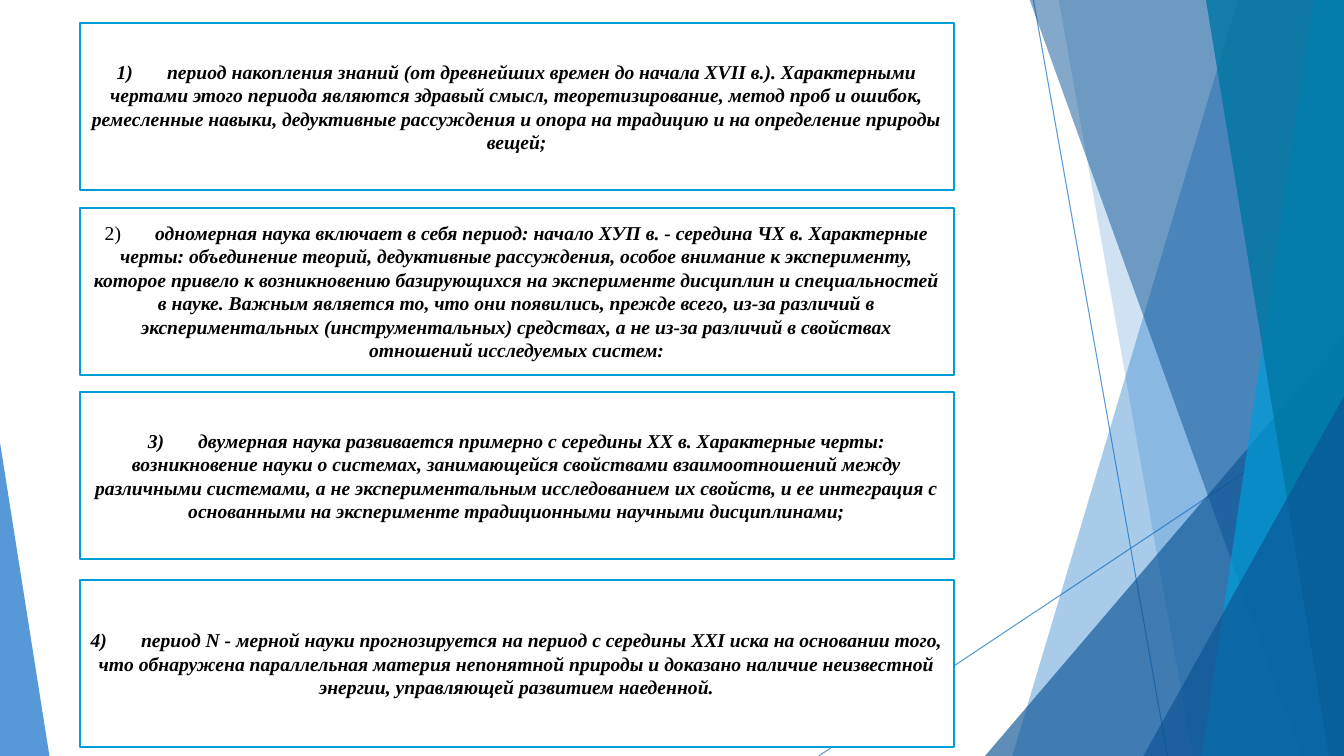
from collections import namedtuple

from lxml.etree import SubElement
from pptx import Presentation
from pptx.dml.color import RGBColor
from pptx.enum.shapes import MSO_CONNECTOR, MSO_SHAPE
from pptx.enum.text import MSO_ANCHOR, PP_ALIGN
from pptx.oxml.ns import qn
from pptx.util import Pt

PX = 9144
Box = namedtuple("Box", "left top width height")

WHITE = RGBColor(0xFF, 0xFF, 0xFF)
BLACK = RGBColor(0x00, 0x00, 0x00)
BLUE = RGBColor(0x0F, 0x6F, 0xC6)
NAVY = RGBColor(0x0B, 0x53, 0x94)
CYAN = RGBColor(0x00, 0x9D, 0xD9)
TEAL = RGBColor(0x00, 0x76, 0xA3)

PLAIN = {"size": Pt(14), "name": "Times New Roman"}
STRONG = {**PLAIN, "bold": True, "italic": True}

PERIOD_TOPS = (23, 206, 389, 575)
PERIODS = (
    ("1)", STRONG, "период накопления знаний (от древнейших времен до начала XVII в.). "
     "Характерными чертами этого периода являются здравый смысл, теоретизирование, "
     "метод проб и ошибок, ремесленные навыки, дедуктивные рассуждения и опора на "
     "традицию и на определение природы вещей;"),
    ("2)", PLAIN, "одномерная наука включает в себя период: начало ХУП в. - середина ЧХ в. "
     "Характерные черты: объединение теорий, дедуктивные рассуждения, особое внимание к "
     "эксперименту, которое привело к возникновению базирующихся на эксперименте дисциплин "
     "и специальностей в науке. Важным является то, что они появились, прежде всего, из-за "
     "различий в экспериментальных (инструментальных) средствах, а не из-за различий в "
     "свойствах отношений исследуемых систем:"),
    ("3)", STRONG, "двумерная наука развивается примерно с середины XX в. Характерные черты: "
     "возникновение науки о системах, занимающейся свойствами взаимоотношений между "
     "различными системами, а не экспериментальным исследованием их свойств, и ее "
     "интеграция с основанными на эксперименте традиционными научными дисциплинами;"),
    ("4)", STRONG, "период N - мерной науки прогнозируется на период с середины XXI иска на "
     "основании того, что обнаружена параллельная материя непонятной природы и доказано "
     "наличие неизвестной энергии, управляющей развитием наеденной."),
)


def emu(box):
    return [value * PX for value in box]


def set_alpha(fill_parent, percent):
    color = next(fill_parent.iter(qn("a:srgbClr")))
    SubElement(color, qn("a:alpha"), val=str(percent * 1000))


def paint(shape, color, percent):
    shape.shadow.inherit = False
    shape.fill.solid()
    shape.fill.fore_color.rgb = color
    shape.line.fill.background()
    set_alpha(shape._element.spPr, percent)


def add_ray(slide, box, start, end):
    points = [(box.left + x, box.top + y) for x, y in (start, end)]
    ray = slide.shapes.add_connector(MSO_CONNECTOR.STRAIGHT, *emu(points[0] + points[1]))
    ray.line.color.rgb = BLUE
    ray.line.width = Pt(0.75)
    set_alpha(ray._element.spPr, 70)
    SubElement(ray._element.spPr, qn("a:effectLst"))


def add_facet(slide, box, top_x, bottom_x, color, percent):
    top, bottom = -1, box.height
    corners = [(top_x, top), (box.width, top), (box.width, bottom), (bottom_x, bottom)]
    points = [(box.left + x, box.top + y) for x, y in corners]
    builder = slide.shapes.build_freeform(*points[0], scale=PX)
    builder.add_line_segments(points[1:], close=True)
    paint(builder.convert_to_shape(), color, percent)


def add_wedge(slide, box, apex, color, percent):
    wedge = slide.shapes.add_shape(MSO_SHAPE.ISOSCELES_TRIANGLE, *emu(box))
    wedge.adjustments[0] = apex
    paint(wedge, color, percent)


def add_right_wedge(slide, box, left, top, color, percent):
    corner = Box(box.left + left, box.top + top, box.width - left, box.height - top)
    add_wedge(slide, corner, 1, color, percent)


def add_crystal(slide, box):
    add_ray(slide, box, (213, 0), (346, box.height))
    add_ray(slide, box, (box.width, 403), (0, box.height))
    shards = (
        (add_facet, 416, 192, BLUE, 36),
        (add_facet, 238, 371, BLUE, 20),
        (add_right_wedge, 165, 333, NAVY, 66),
        (add_facet, 209, 479, NAVY, 50),
        (add_facet, 491, 380, CYAN, 70),
        (add_facet, 384, 506, TEAL, 80),
        (add_right_wedge, 322, 393, NAVY, 66),
    )
    for add_shard, *values in shards:
        add_shard(slide, box, *values)


def add_run(paragraph, text, font_format):
    run = paragraph.add_run()
    run.text = text
    run.font.color.rgb = BLACK
    for name, value in font_format.items():
        setattr(run.font, name, value)


def add_period(slide, box, number, number_format, text):
    card = slide.shapes.add_shape(MSO_SHAPE.RECTANGLE, *emu(box))
    card.shadow.inherit = False
    card.fill.solid()
    card.fill.fore_color.rgb = WHITE
    card.line.color.rgb = CYAN
    card.line.width = Pt(1.5)
    frame = card.text_frame
    for name, value in {"word_wrap": True, "vertical_anchor": MSO_ANCHOR.MIDDLE}.items():
        setattr(frame, name, value)
    paragraph = frame.paragraphs[0]
    paragraph.alignment = PP_ALIGN.CENTER
    add_run(paragraph, number + "\t", number_format)
    add_run(paragraph, text, STRONG)


def main():
    presentation = Presentation()
    presentation.slide_width = 1333 * PX
    presentation.slide_height = 750 * PX
    slide = presentation.slides.add_slide(presentation.slide_layouts[6])
    add_crystal(slide, Box(812, 0, 521, 750))
    add_wedge(slide, Box(0, 439, 49, 311), 0, BLUE, 70)
    for top, period in zip(PERIOD_TOPS, PERIODS):
        add_period(slide, Box(79, top, 867, 166), *period)
    presentation.save("out.pptx")


if __name__ == "__main__":
    main()
